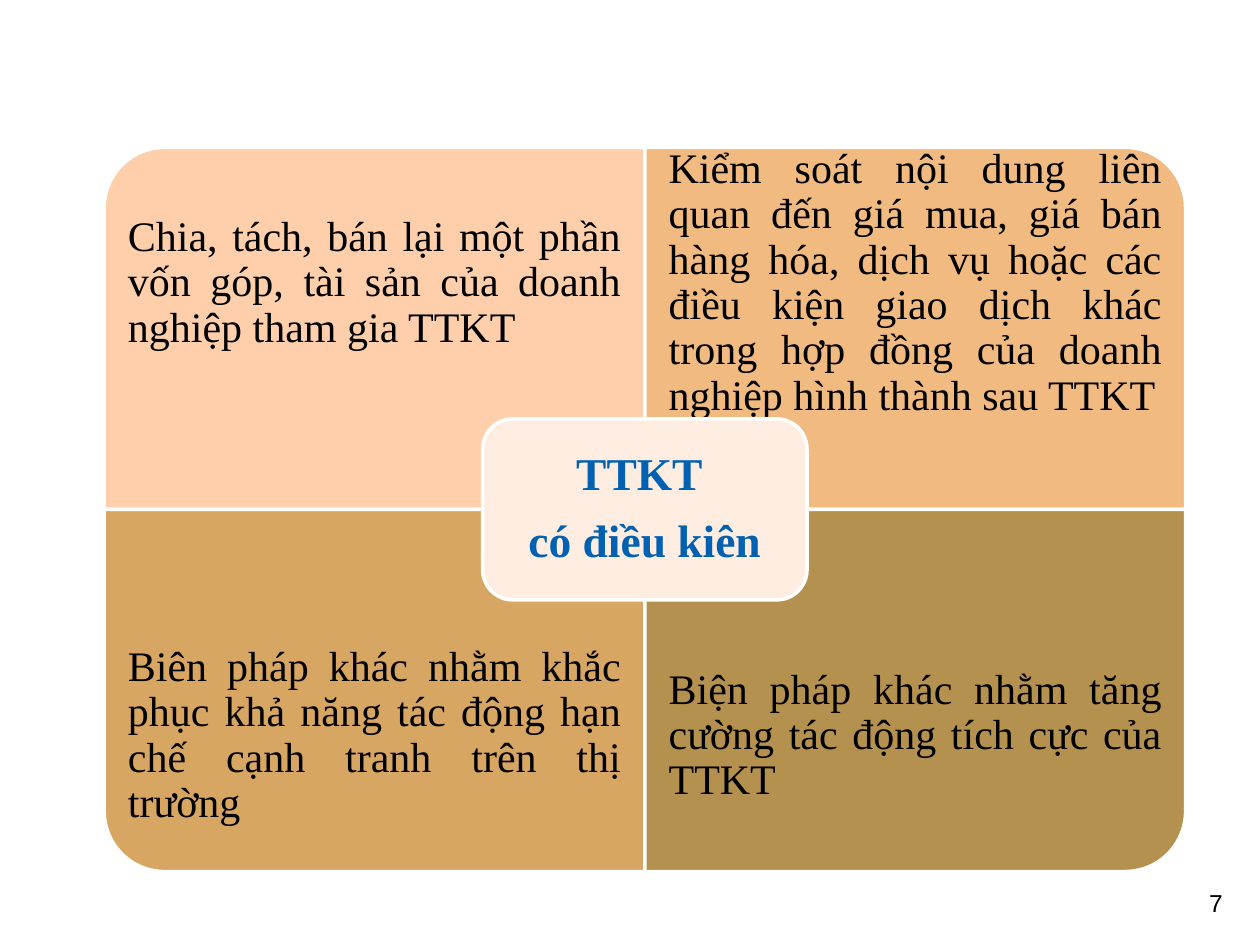
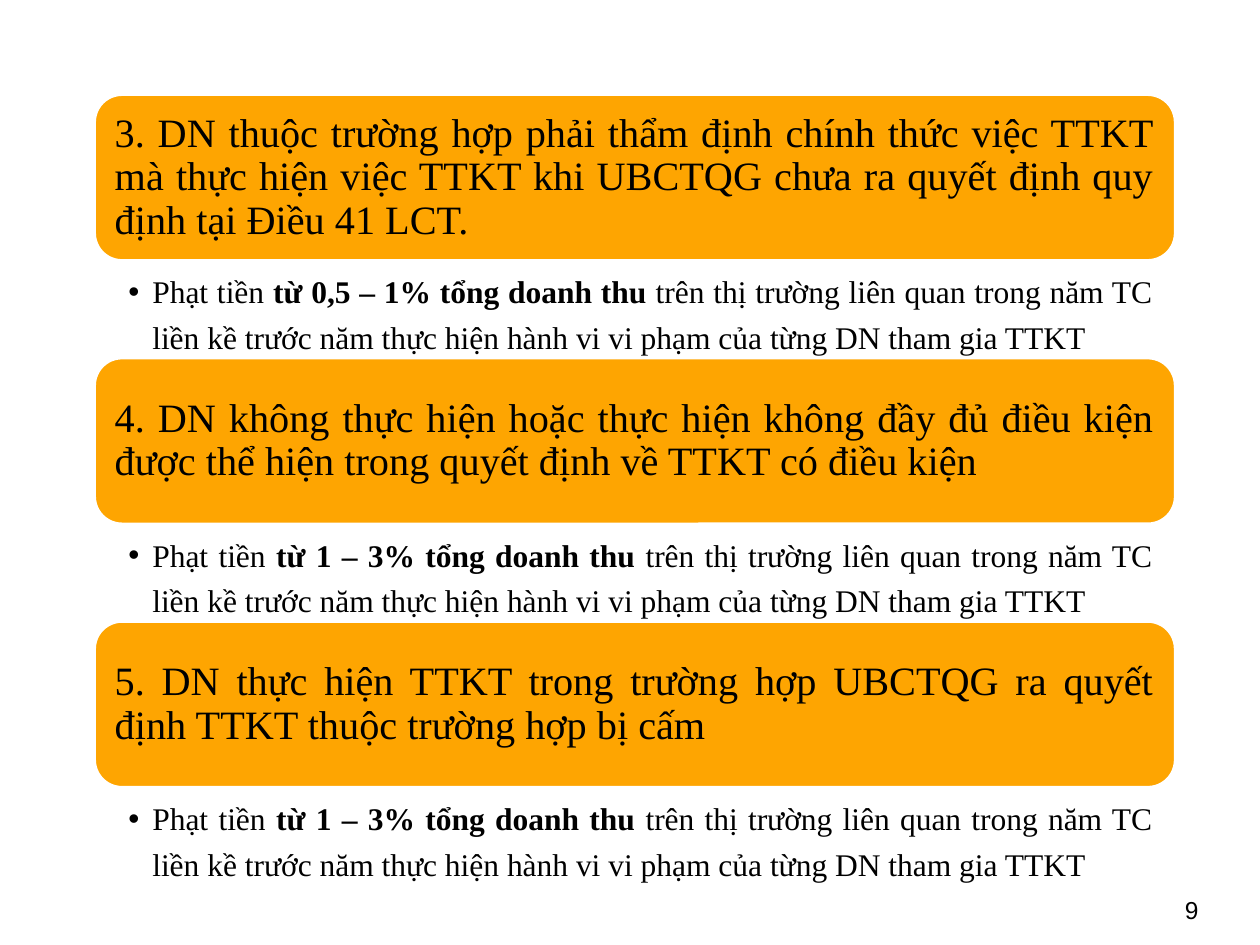
from lxml.etree import SubElement
from pptx import Presentation
from pptx.dml.color import RGBColor
from pptx.enum.shapes import MSO_SHAPE
from pptx.enum.text import MSO_ANCHOR, MSO_AUTO_SIZE, PP_ALIGN
from pptx.oxml.ns import qn
from pptx.util import Cm, Pt

BLACK = RGBColor(0x00, 0x00, 0x00)
WHITE = RGBColor(0xFF, 0xFF, 0xFF)
BLUE = RGBColor(0x00, 0x61, 0xB2)
PEACH = RGBColor(0xFE, 0xCF, 0xAA)
APRICOT = RGBColor(0xF0, 0xBA, 0x81)
SAND = RGBColor(0xD8, 0xA6, 0x63)
OLIVE = RGBColor(0xB5, 0x91, 0x4F)
CREAM = RGBColor(0xFF, 0xED, 0xE2)
ORANGE = RGBColor(0xFE, 0xA5, 0x01)
SERIF, SANS = "Times New Roman", "Arial"

# Row by row: text, fill, turn that puts the round corner outside
QUARTERS = [
    ("Chia, tách, bán lại một phần vốn góp, tài sản của doanh nghiệp "
     "tham gia TTKT", PEACH, 270),
    ("Kiểm soát nội dung liên quan đến giá mua, giá bán hàng hóa, dịch vụ "
     "hoặc các điều kiện giao dịch khác trong hợp đồng của doanh nghiệp "
     "hình thành sau TTKT", APRICOT, 0),
    ("Biên pháp khác nhằm khắc phục khả năng tác động hạn chế cạnh tranh "
     "trên thị trường", SAND, 180),
    ("Biện pháp khác nhằm tăng cường tác động tích cực của TTKT", OLIVE, 90),
]
CORE = ["TTKT ", "có điều kiên"]

# Violation, share of revenue fined
FINES = [
    ("3. DN thuộc trường hợp phải thẩm định chính thức việc TTKT mà thực hiện "
     "việc TTKT khi UBCTQG chưa ra quyết định quy định tại Điều 41 LCT.",
     "0,5 – 1%"),
    ("4. DN không thực hiện hoặc thực hiện không đầy đủ điều kiện được thể "
     "hiện trong quyết định về TTKT có điều kiện", "1 – 3%"),
    ("5. DN thực hiện TTKT trong trường hợp UBCTQG ra quyết định TTKT thuộc "
     "trường hợp bị cấm", "1 – 3%"),
]
SCOPE = ("trên thị trường liên quan trong năm TC liền kề trước năm thực hiện "
         "hành vi vi phạm của từng DN tham gia TTKT")


def style(para, size, color=BLACK, align=PP_ALIGN.JUSTIFY, bold=False,
          face=SERIF, lines=0.9, after=0.0):
    para.alignment = align
    para.line_spacing = lines
    para.space_before = Pt(0)
    para.space_after = Pt(after)
    font = para.font
    font.name, font.size, font.bold = face, Pt(size), bold
    font.color.rgb = color


def frame(shape, pads, anchor=MSO_ANCHOR.MIDDLE):
    """Wrap the text, set its margins (left, top, right, bottom) in cm."""
    text = shape.text_frame
    text.word_wrap = True
    text.auto_size = MSO_AUTO_SIZE.NONE
    text.vertical_anchor = anchor
    (text.margin_left, text.margin_top,
     text.margin_right, text.margin_bottom) = map(Cm, pads)
    return text


def panel(slide, kind, box, fill):
    shape = slide.shapes.add_shape(kind, *map(Cm, box))
    shape.shadow.inherit = False
    shape.fill.solid()
    shape.fill.fore_color.rgb = fill
    shape.line.color.rgb = WHITE
    shape.line.width = Pt(2)
    return shape


def number(slide, value, left, top):
    box = slide.shapes.add_textbox(Cm(left), Cm(top), Cm(1.4), Cm(0.84))
    text = frame(box, (0.25, 0.13, 0.25, 0.13), MSO_ANCHOR.TOP)
    text.text = str(value)
    style(text.paragraphs[0], 14, align=PP_ALIGN.RIGHT, face=SANS, lines=1.0)


def matrix(deck):
    slide = deck.slides.add_slide(deck.slide_layouts[6])
    left, top, wide, high = 2.1, 2.97, 10.9, 7.3
    deep = high * 0.75
    for i, (words, fill, turn) in enumerate(QUARTERS):
        row, col = divmod(i, 2)
        x, y = left + col * wide, top + row * high
        # A quarter turn swaps the sides about the same centre
        w, h = (high, wide) if turn % 180 else (wide, high)
        box = (x + (wide - w) / 2, y + (high - h) / 2, w, h)
        panel(slide, MSO_SHAPE.ROUND_1_RECTANGLE, box, fill).rotation = turn
        area = (x, y + row * (high - deep), wide, deep)
        text = frame(slide.shapes.add_textbox(*map(Cm, area)), [0.48] * 4)
        text.text = words
        style(text.paragraphs[0], 24, after=10)

    w, h = wide * 0.6, high / 2
    core = panel(slide, MSO_SHAPE.ROUNDED_RECTANGLE,
                 (left + wide - w / 2, top + high - h / 2, w, h), CREAM)
    text = frame(core, [0.28] * 4)
    text.text = "\n".join(CORE)
    for para in text.paragraphs:
        style(para, 26, BLUE, PP_ALIGN.CENTER, bold=True, after=10)
    number(slide, 7, 23.5, 17.78)


def bullet(para):
    props = para._p.get_or_add_pPr()
    props.set("marL", str(Cm(0.48)))
    props.set("indent", str(-Cm(0.48)))
    SubElement(props, qn("a:buFont")).set("typeface", SANS)
    SubElement(props, qn("a:buChar")).set("char", "•")


def fines(deck):
    slide = deck.slides.add_slide(deck.slide_layouts[4])
    title, *bodies = slide.placeholders
    left, top, wide, high, step = 1.9, 1.9, 21.8, 3.36, 5.31
    for i, ((words, share), body) in enumerate(zip(FINES, bodies)):
        y = top + i * step
        bar = panel(slide, MSO_SHAPE.ROUNDED_RECTANGLE,
                    (left, y, wide, high), ORANGE)
        text = frame(bar, [0.25] * 4)
        text.text = words
        style(text.paragraphs[0], 23, after=9)

        body.left, body.top = Cm(left), Cm(y + high)
        body.width, body.height = Cm(wide), Cm(step - high)
        text = frame(body, (0.69, 0.08, 0.46, 0.08), MSO_ANCHOR.TOP)
        para = text.paragraphs[0]
        para.level = 1
        bullet(para)
        style(para, 18, lines=1.2, after=4)
        for part in ("Phạt tiền ", f"từ {share} tổng doanh thu ", SCOPE):
            para.add_run().text = part
        para.runs[1].font.bold = True

    for spare in (title, *bodies[len(FINES):]):
        spare.element.getparent().remove(spare.element)
    number(slide, 9, 23.01, 17.91)


def main():
    deck = Presentation()
    deck.slide_width, deck.slide_height = Cm(25.4), Cm(19.05)
    matrix(deck)
    fines(deck)
    deck.save("out.pptx")


if __name__ == "__main__":
    main()
